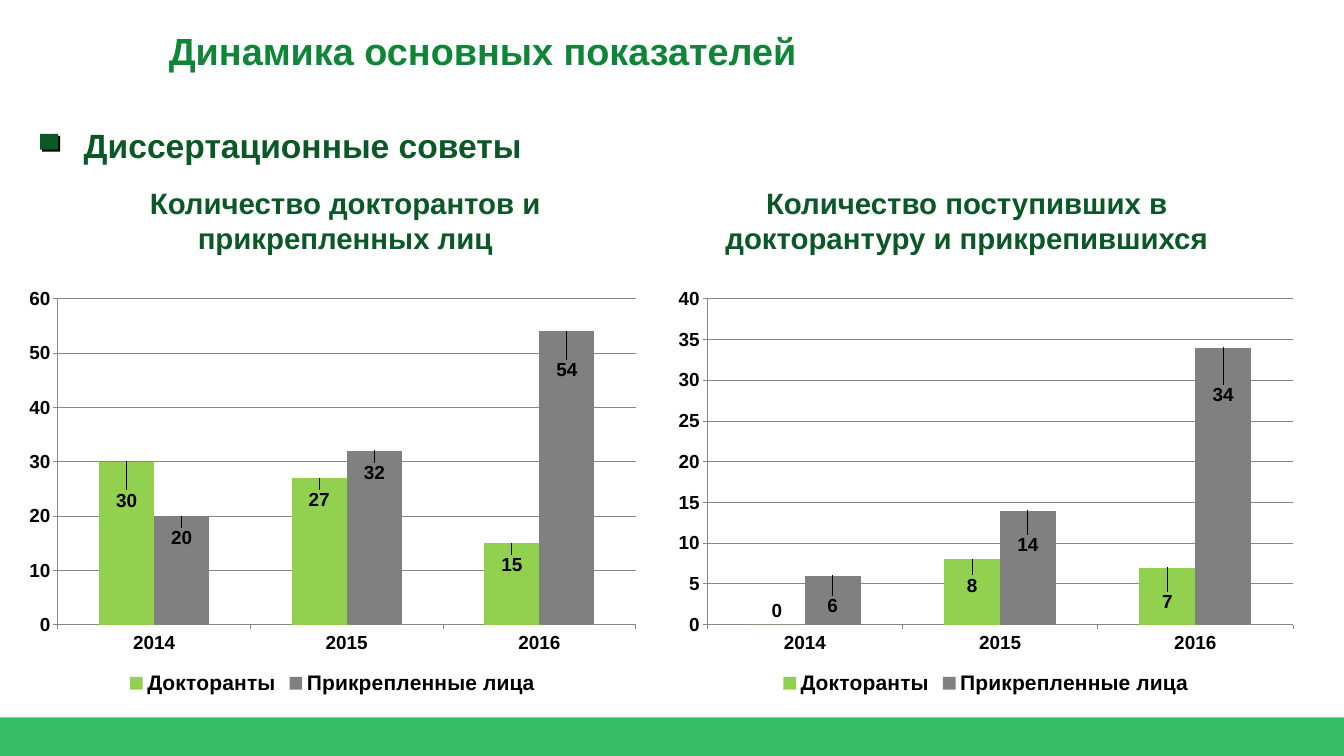
from lxml import etree
from pptx import Presentation
from pptx.chart.data import CategoryChartData
from pptx.dml.color import RGBColor
from pptx.enum.chart import XL_CHART_TYPE, XL_LABEL_POSITION, XL_LEGEND_POSITION, XL_TICK_MARK
from pptx.enum.shapes import MSO_SHAPE
from pptx.enum.text import MSO_ANCHOR, PP_ALIGN
from pptx.oxml import parse_xml
from pptx.oxml.ns import nsdecls, qn
from pptx.util import Inches, Pt

COLUMN = XL_CHART_TYPE.COLUMN_CLUSTERED
INSIDE, OUTSIDE = XL_LABEL_POSITION.INSIDE_END, XL_LABEL_POSITION.OUTSIDE_END
LEGEND_BOTTOM = XL_LEGEND_POSITION.BOTTOM
TICK_OUT, TICK_NONE = XL_TICK_MARK.OUTSIDE, XL_TICK_MARK.NONE
RECTANGLE = MSO_SHAPE.RECTANGLE
TOP, MIDDLE = MSO_ANCHOR.TOP, MSO_ANCHOR.MIDDLE
LEFT, CENTER = PP_ALIGN.LEFT, PP_ALIGN.CENTER

WIDTH, HEIGHT = Inches(17.78), Inches(10)
FONT = "Arial"
GREEN, DARK_GREEN, BAND_GREEN = "0E8537", "095825", "13B14A"
BLACK, AXIS_GREY = "000000", "878787"
YEARS = ["2014", "2015", "2016"]
SERIES = [("Докторанты", "92D050"), ("Прикрепленные лица", "808080")]


def color(value):
    """Turn a hex string into a colour."""
    return RGBColor.from_string(value)


def place(box):
    """Turn a box in percent of the slide into lengths."""
    left, top, width, height = box
    return (int(WIDTH * left / 100), int(HEIGHT * top / 100),
            int(WIDTH * width / 100), int(HEIGHT * height / 100))


def within(box, left, top, width, height):
    """Return a box given as shares of another box."""
    return (box[0] + box[2] * left, box[1] + box[3] * top,
            box[2] * width, box[3] * height)


def style_font(font, size, fill=BLACK):
    """Apply the bold face of the slide."""
    font.name, font.size, font.bold = FONT, Pt(size), True
    font.color.rgb = color(fill)


def write(shape, text, size=28, fill=DARK_GREEN, align=LEFT, anchor=TOP):
    """Put one formatted paragraph into a shape."""
    frame = shape.text_frame
    frame.word_wrap, frame.vertical_anchor = True, anchor
    para = frame.paragraphs[0]
    para.alignment = align
    span = para.add_run()
    span.text = text
    style_font(span.font, size, fill)


def add_block(page, box, fill):
    """Draw a plain rectangle without outline."""
    block = page.shapes.add_shape(RECTANGLE, *place(box))
    block.shadow.inherit = False
    block.fill.solid()
    block.fill.fore_color.rgb = color(fill)
    block.line.fill.background()
    return block


def add_band(page, box):
    """Draw the translucent band at the foot."""
    band = add_block(page, box, BAND_GREEN)
    tint = band.fill._xPr.find(".//" + qn("a:srgbClr"))
    etree.SubElement(tint, qn("a:alpha")).set("val", "85000")


def add_title(page, box, text):
    """Fill and move the title placeholder."""
    title = page.shapes.title
    title.left, title.top, title.width, title.height = place(box)
    frame = title.text_frame
    frame.margin_left = frame.margin_right = Inches(0.1)
    frame.margin_top = frame.margin_bottom = Inches(0.1)
    write(title, text, size=36, fill=GREEN, anchor=MIDDLE)


def add_topic(page, box, text):
    """Place the topic line with its shadowed square marker."""
    marker = add_block(page, within(box, 0, 0.31, 0.02, 0.38), DARK_GREEN)
    effects = marker._element.spPr.find(qn("a:effectLst"))
    shadow = etree.SubElement(effects, qn("a:outerShdw"), dist=str(Pt(2.8)),
                              dir="2700000", algn="ctr", rotWithShape="0")
    etree.SubElement(shadow, qn("a:srgbClr"), val=BLACK)
    label = page.shapes.add_textbox(*place(within(box, 0.04, 0, 0.96, 1)))
    write(label, text, size=32)


def style_axis(axis, tick):
    """Give an axis its line, ticks and font."""
    axis.major_tick_mark, axis.minor_tick_mark = tick, TICK_NONE
    axis.format.line.color.rgb = color(AXIS_GREY)
    style_font(axis.tick_labels.font, 18)


def add_labels(series, drops):
    """Label each bar, lowered by a share of the chart's height."""
    labels = series.data_labels
    labels.show_value, labels.position = True, OUTSIDE
    style_font(labels.font, 18)
    for index, drop in enumerate(drops):
        if drop is None:
            continue
        label = series.points[index].data_label
        style_font(label.font, 18)
        label.position = INSIDE
        node = labels._element.findall(qn("c:dLbl"))[-1]
        node.insert(1, parse_xml(
            f'<c:layout {nsdecls("c")}><c:manualLayout>'
            f'<c:x val="0"/><c:y val="{drop}"/>'
            '</c:manualLayout></c:layout>'))


def add_panel(page, box, heading, heading_span, values, drops, top, step):
    """Place a heading and the column chart below it."""
    left, width = heading_span
    label = page.shapes.add_textbox(*place(within(box, left, 0, width, 0.15)))
    write(label, heading, align=CENTER, anchor=MIDDLE)

    data = CategoryChartData()
    data.categories = YEARS
    for (name, _), row in zip(SERIES, values):
        data.add_series(name, row)
    area = place(within(box, 0, 0.19, 1, 0.81))
    chart = page.shapes.add_chart(COLUMN, *area, data).chart
    style_font(chart.font, 18)
    chart.has_title = False
    chart.has_legend = True
    chart.legend.position = LEGEND_BOTTOM
    chart.legend.include_in_layout = False
    style_font(chart.legend.font, 20)

    style_axis(chart.category_axis, TICK_OUT)
    axis = chart.value_axis
    style_axis(axis, TICK_OUT)
    axis.minimum_scale, axis.maximum_scale, axis.major_unit = 0, top, step
    axis.has_major_gridlines = True
    axis.major_gridlines.format.line.color.rgb = color(AXIS_GREY)

    plot = chart.plots[0]
    plot.gap_width, plot.overlap, plot.vary_by_categories = 150, 0, False
    for series, (_, fill), row in zip(plot.series, SERIES, drops):
        series.format.fill.solid()
        series.format.fill.fore_color.rgb = color(fill)
        add_labels(series, row)


def main():
    """Build the slide and save it."""
    deck = Presentation()
    deck.slide_width, deck.slide_height = WIDTH, HEIGHT
    page = deck.slides.add_slide(deck.slide_layouts[5])
    add_band(page, (0, 94.9, 100, 5.1))
    add_title(page, (12, 1.1, 87.2, 11.1), "Динамика основных показателей")
    add_topic(page, (2.98, 16, 67.5, 5.5), "Диссертационные советы")
    add_panel(page, (1.24, 24, 47, 68.5),
              "Количество докторантов и прикрепленных лиц", (0.08, 0.88),
              [(30, 27, 15), (20, 32, 54)],
              [(0.06, 0.02, 0.02), (0.02, 0.02, 0.06)], 60, 10)
    add_panel(page, (49.55, 24, 47.6, 68.5),
              "Количество поступивших в докторантуру и прикрепившихся",
              (0.06, 0.82), [(0, 8, 7), (6, 14, 34)],
              [(None, 0.03, 0.05), (0.04, 0.05, 0.08)], 40, 5)
    deck.save("out.pptx")


if __name__ == "__main__":
    main()
